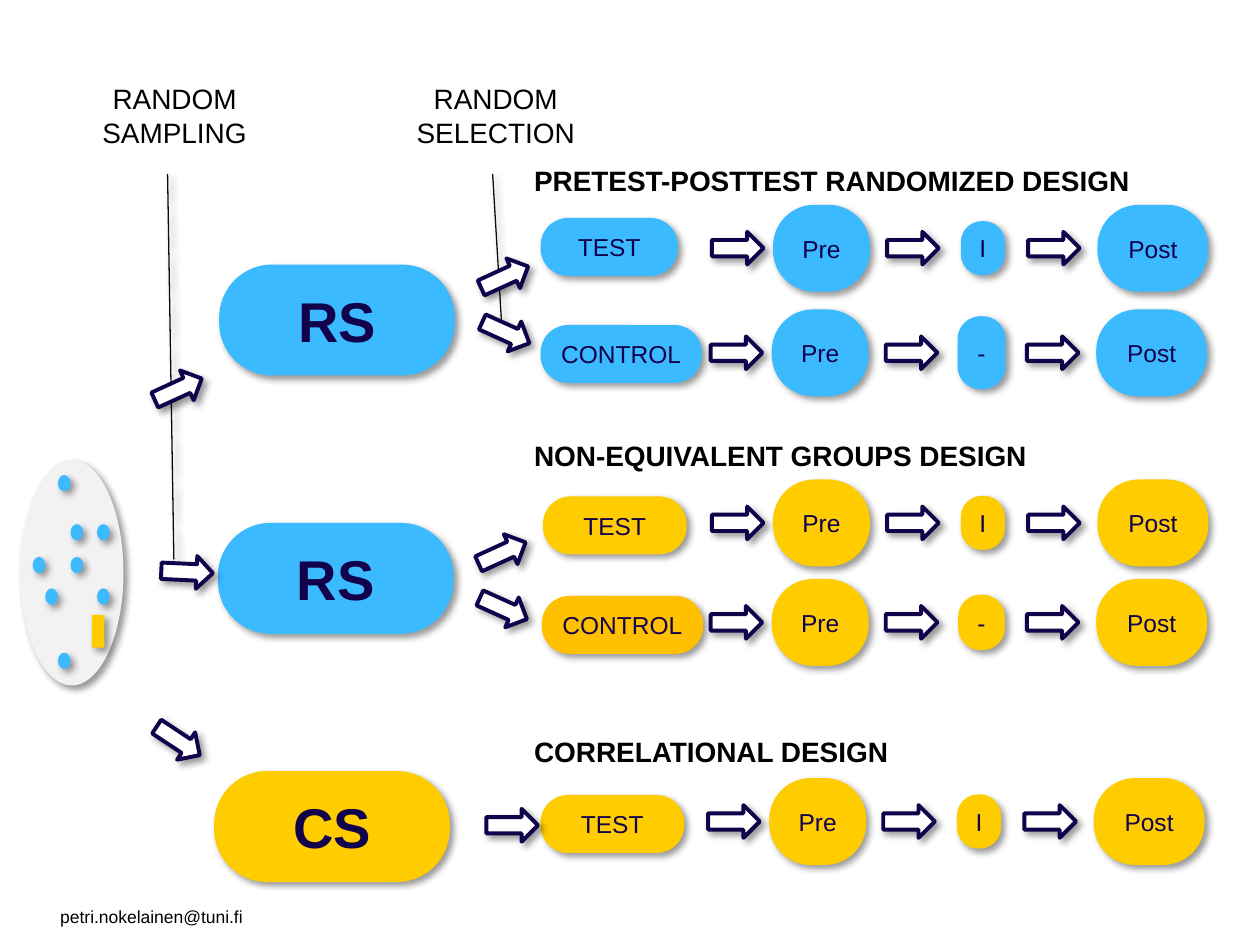
"""Build a slide comparing sampling and research designs."""
import pptx
import pptx.dml.color
import pptx.enum.shapes
import pptx.enum.text
import pptx.oxml
import pptx.oxml.ns
import pptx.util

Inches = pptx.util.Inches
Kind = pptx.enum.shapes.MSO_SHAPE
Align = pptx.enum.text.PP_ALIGN

COLORS = {
    "blue": "3CBAFF", "yellow": "FFCC00", "amber": "FFC000", "grey": "F2F2F2",
    "white": "FFFFFF", "navy": "12024C", "black": "000000", "line": "0D0D0D",
}
SHADOW = (
    f'<a:outerShdw {pptx.oxml.ns.nsdecls("a")} blurRad="50800" dist="38100" dir="2700000" '
    'algn="tl" rotWithShape="0"><a:srgbClr val="000000"><a:alpha val="40000"/>'
    '</a:srgbClr></a:outerShdw>'
)
ARROW_WIDTH, ARROW_HEIGHT = 0.41, 0.26
PILL_HEIGHT = 0.46

GUIDE_LINES = [(3.91, 1.38, 3.98, 2.55), (1.33, 1.38, 1.38, 4.44)]
DOTS = [(0.46, 3.77), (0.77, 4.16), (0.56, 4.42), (0.26, 4.42),
        (0.56, 4.16), (0.77, 4.67), (0.46, 5.18), (0.36, 4.67)]
SAMPLES = [("RS", 1.74, 2.1, "blue"), ("RS", 1.73, 4.15, "blue"), ("CS", 1.7, 6.12, "yellow")]
BRANCH_ARROWS = [
    (1.21, 2.96, -24.6), (1.28, 4.41, 2.7), (1.21, 5.75, 33.5),
    (3.8, 2.07, -24.6), (3.81, 2.51, 24.3), (3.78, 4.26, -24.6), (3.79, 4.7, 24.3),
    (3.86, 6.42, 0),
]
GROUPS = [
    ("TEST", 4.29, 1.73, 1.09, "blue"), ("CONTROL", 4.29, 2.58, 1.28, "blue"),
    ("TEST", 4.31, 3.94, 1.14, "yellow"), ("CONTROL", 4.3, 4.73, 1.28, "amber"),
    ("TEST", 4.29, 6.31, 1.14, "yellow"),
]
MEASUREMENTS = [
    (1.97, 0, "blue", "I", 0.35, 0.43), (2.8, -0.01, "blue", "-", 0.38, 0.58),
    (4.15, 0, "yellow", "I", 0.35, 0.43), (4.94, -0.01, "yellow", "-", 0.37, 0.44),
    (6.52, -0.03, "yellow", "I", 0.35, 0.43),
]
HEADINGS = [("PRETEST-POSTTEST RANDOMIZED DESIGN", 1.25, 5.04),
            ("NON-EQUIVALENT GROUPS DESIGN", 3.43, 4.16),
            ("CORRELATIONAL DESIGN", 5.78, 3.04)]


def rgb(name):
    """Return a named colour."""
    return pptx.dml.color.RGBColor.from_string(COLORS[name])


def write_text(shape, text, size, color, bold=False, align=Align.CENTER):
    """Write one paragraph per line of text."""
    frame = shape.text_frame
    frame.word_wrap = False
    frame.text = text
    for paragraph in frame.paragraphs:
        paragraph.alignment = align
        paragraph.font.name = "Arial"
        paragraph.font.size = pptx.util.Pt(size)
        paragraph.font.bold = bold
        paragraph.font.color.rgb = rgb(color)


def add_shape(slide, kind, left, top, width, height, fill):
    """Add a filled preset shape with a soft shadow and no outline."""
    shape = slide.shapes.add_shape(kind, Inches(left), Inches(top), Inches(width), Inches(height))
    shape.fill.solid()
    shape.fill.fore_color.rgb = rgb(fill)
    shape.line.fill.background()
    shape.shadow.inherit = False
    effects = shape._element.spPr.find(pptx.oxml.ns.qn("a:effectLst"))
    effects.append(pptx.oxml.parse_xml(SHADOW))
    return shape


def add_pill(slide, text, left, top, width, height, fill, size=14, bold=False):
    """Add a rounded box with a centred label."""
    pill = add_shape(slide, Kind.ROUNDED_RECTANGLE, left, top, width, height, fill)
    pill.adjustments[0] = 0.476
    pill.text_frame.vertical_anchor = pptx.enum.text.MSO_ANCHOR.MIDDLE
    write_text(pill, text, size, "navy", bold)


def add_arrow(slide, left, top, rotation=0):
    """Add an outlined block arrow."""
    arrow = add_shape(slide, Kind.RIGHT_ARROW, left, top, ARROW_WIDTH, ARROW_HEIGHT, "white")
    arrow.line.color.rgb = rgb("navy")
    arrow.line.width = pptx.util.Pt(2.25)
    arrow.rotation = rotation


def add_guide_line(slide, *ends):
    """Add a thin shadowed line from a label to its arrows."""
    line = slide.shapes.add_connector(
        pptx.enum.shapes.MSO_CONNECTOR.STRAIGHT, *(Inches(end) for end in ends))
    line.line.color.rgb = rgb("line")
    line.line.width = pptx.util.Pt(0.75)
    effects = pptx.oxml.parse_xml(f'<a:effectLst {pptx.oxml.ns.nsdecls("a")}/>')
    effects.append(pptx.oxml.parse_xml(SHADOW))
    line._element.spPr.append(effects)


def add_label(slide, text, left, top, width, height, size=16, bold=False, align=Align.LEFT):
    """Add a plain text box."""
    box = slide.shapes.add_textbox(Inches(left), Inches(top), Inches(width), Inches(height))
    write_text(box, text, size, "black", bold, align)


def add_population(slide):
    """Add the population ellipse with its members."""
    add_shape(slide, Kind.OVAL, 0.16, 3.65, 0.82, 1.79, "grey")
    add_shape(slide, Kind.RECTANGLE, 0.73, 4.88, 0.1, 0.26, "yellow")
    for left, top in DOTS:
        add_shape(slide, Kind.OVAL, left, top, 0.1, 0.13, "blue")


def add_measurements(slide, middle, shift, fill, treatment, width, height):
    """Add one row of pretest, treatment and posttest boxes with arrows."""
    for left in (5.65, 7.04, 8.16):
        add_arrow(slide, left + shift, middle - ARROW_HEIGHT / 2)
    boxes = [("Pre", 6.52, 0.77, 0.69), (treatment, 7.8, width, height), ("Post", 9.15, 0.88, 0.69)]
    for text, center, box_width, box_height in boxes:
        add_pill(slide, text, center + shift - box_width / 2, middle - box_height / 2,
                 box_width, box_height, fill)


def main():
    """Build and save the slide."""
    presentation = pptx.Presentation()
    presentation.slide_width, presentation.slide_height = Inches(10), Inches(7.5)
    slide = presentation.slides.add_slide(presentation.slide_layouts[6])
    add_label(slide, "petri.nokelainen@tuni.fi", 0.38, 7.14, 1.66, 0.27, size=10)
    for ends in GUIDE_LINES:
        add_guide_line(slide, *ends)
    add_population(slide)
    for text, left, top, fill in SAMPLES:
        add_pill(slide, text, left, top, 1.87, 0.88, fill, size=32, bold=True)
    for text, left, top, width, fill in GROUPS:
        add_pill(slide, text, left, top, width, PILL_HEIGHT, fill)
    for row in MEASUREMENTS:
        add_measurements(slide, *row)
    for left, top, rotation in BRANCH_ARROWS:
        add_arrow(slide, left, top, rotation)
    add_label(slide, "RANDOM\nSAMPLING", 0.69, 0.6, 1.39, 0.64, align=Align.CENTER)
    add_label(slide, "RANDOM\nSELECTION", 3.2, 0.6, 1.47, 0.64, align=Align.CENTER)
    for text, top, width in HEADINGS:
        add_label(slide, text, 4.14, top, width, 0.37, bold=True)
    presentation.save("out.pptx")


if __name__ == "__main__":
    main()
